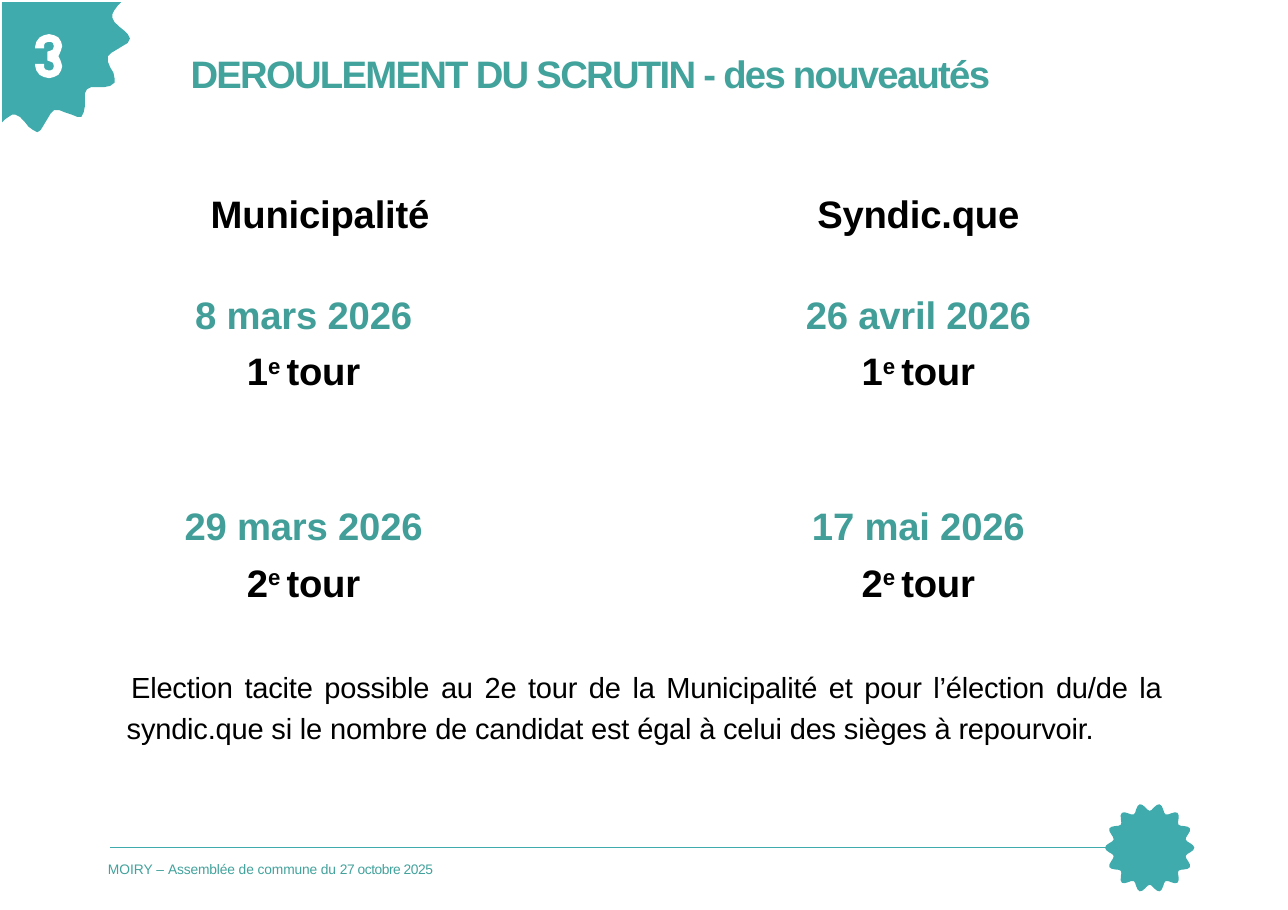
import math
from dataclasses import dataclass

import pptx
import pptx.dml.color
import pptx.enum.shapes
import pptx.enum.text
import pptx.oxml.ns
import pptx.util
from lxml import etree

WIDTH, HEIGHT = pptx.util.Inches(11.69), pptx.util.Inches(8.26)
GRID_COLUMNS = 1169
FINENESS = 10
TEAL, TITLE_TEAL, DATE_TEAL = "40ABAD", "42A29C", "419E98"
BLACK, WHITE = "000000", "FFFFFF"
LEFT = pptx.enum.text.PP_ALIGN.LEFT
CENTER = pptx.enum.text.PP_ALIGN.CENTER
JUSTIFY = pptx.enum.text.PP_ALIGN.JUSTIFY

Point = tuple[float, float]


@dataclass(frozen=True)
class Area:
    left: float
    top: float
    width: float
    height: float


@dataclass(frozen=True)
class Piece:
    text: str
    size: float
    color: str
    bold: bool = False
    spacing: int = -10
    raised: bool = False


@dataclass(frozen=True)
class Line:
    pieces: list[Piece]
    align: pptx.enum.text.PP_ALIGN = CENTER
    indent: float = 0.04
    leading: float = 1.2
    before: float = 1


@dataclass(frozen=True)
class Round:
    column: float
    row: float
    date: str
    number: str


def across(percent: float) -> int:
    return round(WIDTH * percent / 100)


def down(percent: float) -> int:
    return round(HEIGHT * percent / 100)


def rgb(color: str) -> pptx.dml.color.RGBColor:
    return pptx.dml.color.RGBColor.from_string(color)


def write(shape, area: Area, lines: list[Line]) -> None:
    shape.left, shape.top = across(area.left), down(area.top)
    shape.width, shape.height = across(area.width), down(area.height)
    frame = shape.text_frame
    frame.word_wrap = True
    frame.auto_size = pptx.enum.text.MSO_AUTO_SIZE.NONE
    frame.vertical_anchor = pptx.enum.text.MSO_ANCHOR.TOP
    frame.margin_left = frame.margin_right = frame.margin_top = frame.margin_bottom = 0
    for index, line in enumerate(lines):
        paragraph = frame.add_paragraph() if index else frame.paragraphs[0]
        paragraph.alignment = line.align
        paragraph.line_spacing = line.leading
        paragraph.space_before = pptx.util.Pt(line.before)
        properties = paragraph._p.get_or_add_pPr()
        properties.set("marL", "0")
        properties.set("indent", str(pptx.util.Inches(line.indent)))
        for piece in line.pieces:
            run = paragraph.add_run()
            run.text = piece.text
            run.font.name = "Arial"
            run.font.size = pptx.util.Pt(piece.size)
            run.font.bold = piece.bold
            run.font.color.rgb = rgb(piece.color)
            run._r.get_or_add_rPr().set("spc", str(piece.spacing))
            if piece.raised:
                run._r.get_or_add_rPr().set("baseline", "31000")


def add_text(slide, area: Area, lines: list[Line]) -> None:
    write(slide.shapes.add_textbox(0, 0, 0, 0), area, lines)


def draw_outline(slide, points: list[Point], color: str) -> None:
    fine = [(round(x * FINENESS), round(y * FINENESS)) for x, y in points]
    builder = slide.shapes.build_freeform(*fine[0], scale=WIDTH / GRID_COLUMNS / FINENESS)
    builder.add_line_segments(fine[1:], close=True)
    outline = builder.convert_to_shape()
    outline.shadow.inherit = False
    outline.fill.solid()
    outline.fill.fore_color.rgb = rgb(color)
    outline.line.fill.background()


def wavy_seal(center: Point, radius: float, wave: float, teeth: int) -> list[Point]:
    steps = teeth * 8
    points = []
    for step in range(steps):
        angle = 2 * math.pi * step / steps
        reach = radius + wave * math.cos(teeth * angle)
        points.append((center[0] + reach * math.cos(angle), center[1] + reach * math.sin(angle)))
    return points


def draw_footer_rule(slide) -> None:
    rule = slide.shapes.add_connector(
        pptx.enum.shapes.MSO_CONNECTOR.STRAIGHT,
        across(8.55), down(93.1), across(89.22), down(93.1))
    rule.line.color.rgb = rgb(TEAL)
    rule.line.width = pptx.util.Pt(0.9)
    etree.SubElement(rule._element.spPr, pptx.oxml.ns.qn("a:effectLst"))


CORNER_SEAL = [
    (110, 2), (2, 2), (2, 111), (5, 108), (8, 106), (11, 104), (14, 104), (18, 106),
    (22, 110), (26, 115), (30, 118), (34, 120), (37, 118), (40, 113), (43, 108), (46, 103),
    (49, 100), (54, 100), (59, 102), (65, 104), (70, 106), (74, 106), (76, 102), (77, 97),
    (77, 91), (77, 85), (79, 81), (83, 79), (89, 79), (95, 79), (100, 78), (104, 75),
    (104, 71), (103, 66), (100, 61), (98, 56), (98, 51), (101, 48), (106, 45), (111, 42),
    (116, 39), (118, 35), (116, 31), (113, 28), (108, 24), (104, 20), (102, 16), (102, 13),
    (104, 9), (107, 5),
]
UPPER_THREE = [
    (53, 51), (55, 47), (56.5, 42), (55.5, 38), (53, 34), (49, 32), (44.5, 31), (40, 32),
    (36, 34), (33, 38), (32, 42), (32, 44), (40, 44), (40, 41), (41, 39), (44, 38),
    (46, 38), (48, 39), (49, 42), (48, 45), (46, 46), (43, 47),
]
THREE = UPPER_THREE + [(x, 102 - y) for x, y in reversed(UPPER_THREE[1:])]

MUNICIPALITY, SYNDIC = 9.84, 57.57
FIRST_ROW, SECOND_ROW = 30.99, 54.24
COLUMN_WIDTH = 27.12
HEADINGS = {"Municipalité": 11.12, "Syndic.que": SYNDIC}
ROUNDS = [
    Round(MUNICIPALITY, FIRST_ROW, "8 mars 2026", "1"),
    Round(MUNICIPALITY, SECOND_ROW, "29 mars 2026", "2"),
    Round(SYNDIC, FIRST_ROW, "26 avril 2026", "1"),
    Round(SYNDIC, SECOND_ROW, "17 mai 2026", "2"),
]
FOOTER = {"MOIRY ": 0, "– ": 10, "Assemblée ": -10, "de ": 0, "commune ": -10,
          "du ": 0, "27 octobre 2025": -30}
TACIT_ELECTION = (
    "Election tacite possible au 2e tour de la Municipalité et pour l’élection du/de la "
    "syndic.que si le nombre de candidat est égal à celui des sièges à repourvoir.")


def main() -> None:
    deck = pptx.Presentation()
    deck.slide_width, deck.slide_height = WIDTH, HEIGHT
    slide = deck.slides.add_slide(deck.slide_layouts[5])

    draw_outline(slide, wavy_seal((1043.5, 769.5), 37, 3.5, 14), TEAL)
    draw_footer_rule(slide)
    draw_outline(slide, CORNER_SEAL, TEAL)
    draw_outline(slide, THREE, WHITE)

    heading = Piece("DEROULEMENT DU SCRUTIN - des nouveautés", 25, TITLE_TEAL, True, -110)
    write(slide.shapes.title, Area(14.71, 5.57, 68.35, 9.56), [Line([heading], LEFT, 0.01, 1)])
    footer = [Piece(text, 9, TITLE_TEAL, spacing=spacing) for text, spacing in FOOTER.items()]
    add_text(slide, Area(8.3, 94.55, 30.11, 1.69), [Line(footer, LEFT, 0.01, 1, 0)])

    for name, column in HEADINGS.items():
        add_text(slide, Area(column, 19.85, COLUMN_WIDTH, 4.72),
                 [Line([Piece(name, 25, BLACK, True)])])
    for ballot in ROUNDS:
        add_text(slide, Area(ballot.column, ballot.row, COLUMN_WIDTH, 10.77), [
            Line([Piece(ballot.date, 25, DATE_TEAL, True)]),
            Line([Piece(ballot.number, 25, BLACK, True),
                  Piece("e ", 25, BLACK, True, raised=True),
                  Piece("tour", 25, BLACK, True)]),
        ])
    add_text(slide, Area(9.84, 72.76, 80.41, 7.99),
             [Line([Piece(TACIT_ELECTION, 19, BLACK)], JUSTIFY)])

    deck.save("out.pptx")


if __name__ == "__main__":
    main()
